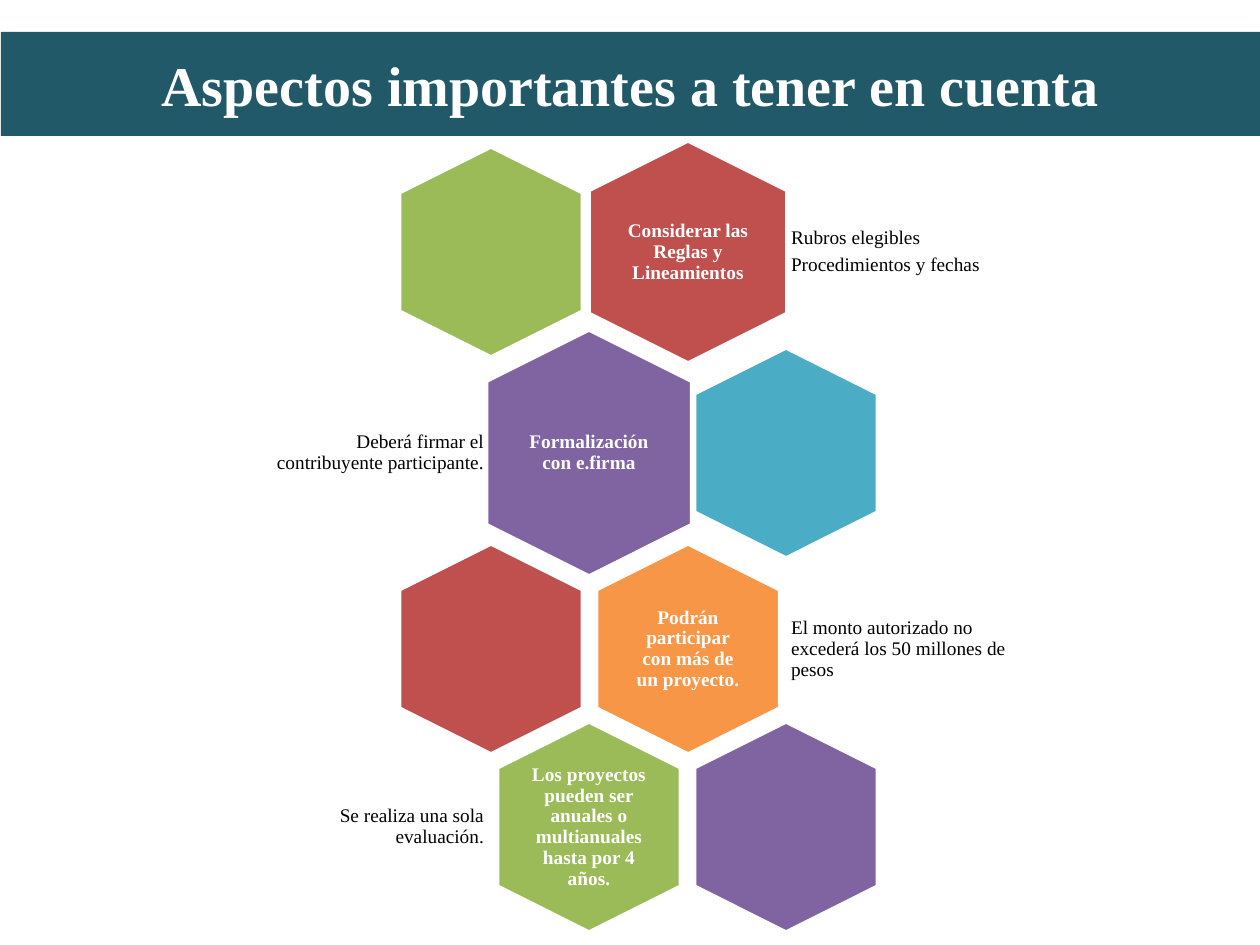
from pptx import Presentation
from pptx.dml.color import RGBColor
from pptx.enum.shapes import MSO_SHAPE as Preset
from pptx.enum.text import MSO_ANCHOR as Anchor, PP_ALIGN as Align
from pptx.util import Emu, Pt

EMU_PER_PX = 914400 / 126
TITLE_ONLY = 5


def px(length):
    return Emu(round(length * EMU_PER_PX))


def color(hex_code):
    return RGBColor.from_string(hex_code)


def write(frame, text, size=11, ink="000000", bold=False, align=Align.LEFT,
          line_spacing=None, space_after=None):
    frame.word_wrap = True
    frame.vertical_anchor = Anchor.MIDDLE
    frame.text = text
    for paragraph in frame.paragraphs:
        paragraph.alignment = align
        if line_spacing:
            paragraph.line_spacing = line_spacing
        if space_after:
            paragraph.space_after = Pt(space_after)
        for run in paragraph.runs:
            font = run.font
            font.name = "Times New Roman"
            font.size = Pt(size)
            font.bold = bold
            font.color.rgb = color(ink)


class HoneycombSlide:
    white = "FFFFFF"
    teal = "215968"
    inset = 6

    def __init__(self, slide):
        self.slide = slide

    def title(self, text, left, top, width, height):
        banner = self.slide.shapes.title
        banner.left, banner.top = px(left), px(top)
        banner.width, banner.height = px(width), px(height)
        banner.fill.solid()
        banner.fill.fore_color.rgb = color(self.teal)
        write(banner.text_frame, text, size=32, ink=self.white, bold=True, align=Align.CENTER)

    def hexagon(self, center_x, center_y, fill, length=210, breadth=183):
        cell = self.slide.shapes.add_shape(
            Preset.HEXAGON, px(center_x - length / 2), px(center_y - breadth / 2),
            px(length), px(breadth))
        cell.rotation = 90
        cell.adjustments[0] = 0.25
        cell.shadow.inherit = False
        cell.fill.solid()
        cell.fill.fore_color.rgb = color(fill)
        cell.line.color.rgb = color(self.white)
        cell.line.width = Pt(2)

    def text(self, text, left, center_y, width, height, **style):
        box = self.slide.shapes.add_textbox(
            px(left), px(center_y - height / 2), px(width), px(height))
        frame = box.text_frame
        frame.margin_left = frame.margin_right = px(self.inset)
        frame.margin_top = frame.margin_bottom = px(self.inset)
        write(frame, text, line_spacing=0.9, space_after=3.85, **style)

    def label(self, text, center_x, center_y, width=126, height=145):
        self.text(text, center_x - width / 2, center_y, width, height,
                  ink=self.white, bold=True, align=Align.CENTER)

    def caption(self, text, center_y, on_right):
        if on_right:
            self.text(text, 785, center_y, 234, 126)
        else:
            self.text(text, 263, center_y, 227, 126, align=Align.RIGHT)


def main():
    red, green, purple, blue, orange = "C0504D", "9BBB59", "8064A2", "4BACC6", "F79646"
    columns = [491, 589, 688, 786]
    rows = [
        (252, red, green, "Considerar las Reglas y Lineamientos",
         "Rubros elegibles\nProcedimientos y fechas", (222, 198), (135, 151)),
        (453, purple, blue, "Formalización con e.firma",
         "Deberá firmar el contribuyente participante.", (246, 205), (142, 170)),
        (649, orange, red, "Podrán participar con más de un proyecto.",
         "El monto autorizado no excederá los 50 millones de pesos", (210, 183), (126, 145)),
        (827, green, purple, "Los proyectos pueden ser anuales o multianuales hasta por 4 años.",
         "Se realiza una sola evaluación.", (210, 183), (126, 145)),
    ]

    deck = Presentation()
    deck.slide_width, deck.slide_height = px(1260), px(945)
    page = HoneycombSlide(deck.slides.add_slide(deck.slide_layouts[TITLE_ONLY]))
    page.title("Aspectos importantes a tener en cuenta", 1, 32, 1259, 104)

    for index, (center_y, fill, accent, topic, detail, cell, label) in enumerate(rows):
        on_right = index % 2 == 0
        topic_x, accent_x = (columns[2], columns[0]) if on_right else (columns[1], columns[3])
        page.hexagon(topic_x, center_y, fill, *cell)
        page.label(topic, topic_x, center_y, *label)
        page.caption(detail, center_y, on_right)
        page.hexagon(accent_x, center_y, accent)

    deck.save("out.pptx")


if __name__ == "__main__":
    main()
